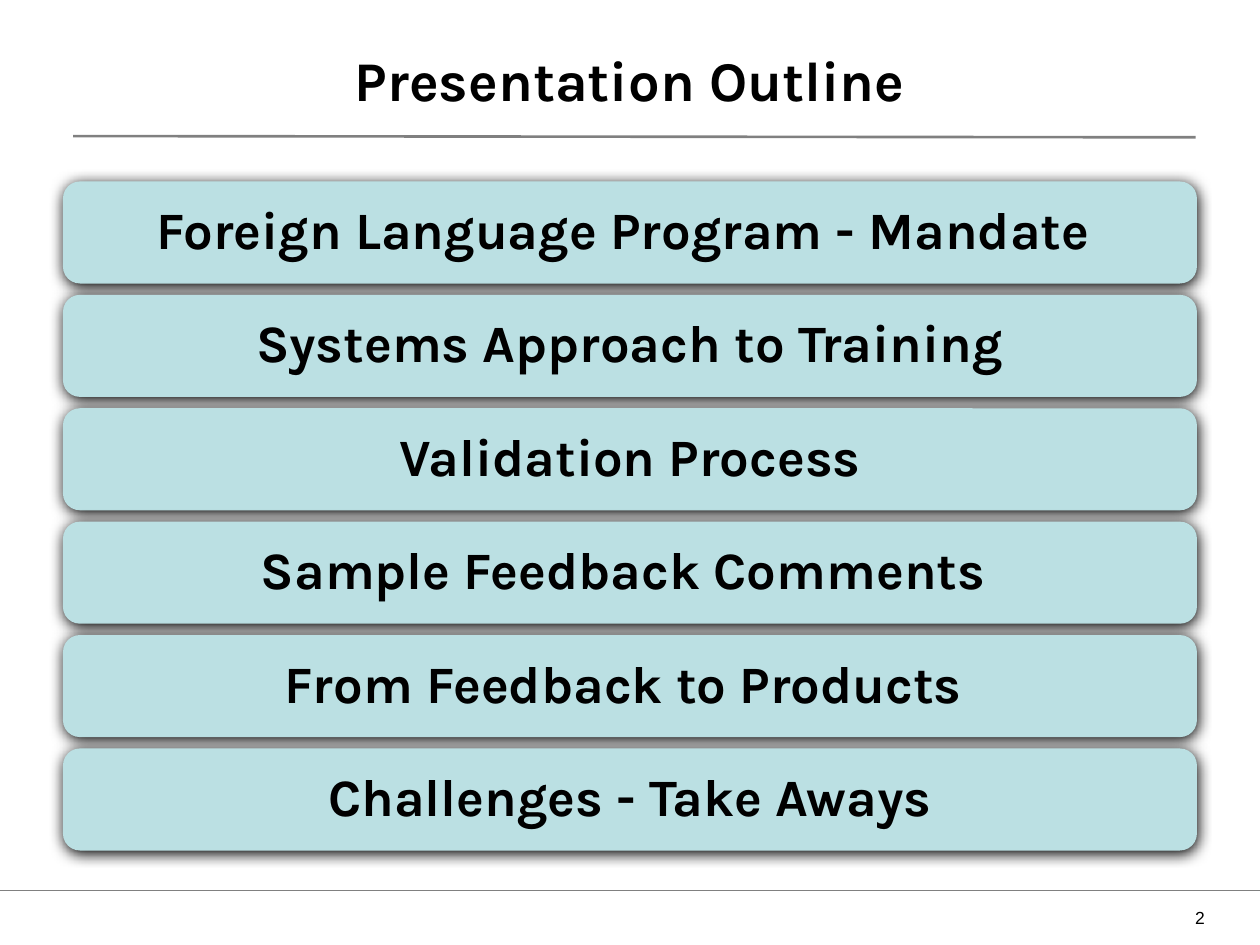
"""Build the presentation outline slide with six stacked topic bars."""
from lxml import etree
from pptx import Presentation
from pptx.dml.color import RGBColor
from pptx.enum.shapes import MSO_CONNECTOR, MSO_SHAPE
from pptx.enum.text import MSO_ANCHOR, MSO_AUTO_SIZE, PP_ALIGN
from pptx.oxml import parse_xml
from pptx.oxml.ns import nsdecls, qn
from pptx.util import Inches, Pt

STRAIGHT = MSO_CONNECTOR.STRAIGHT
ROUNDED = MSO_SHAPE.ROUNDED_RECTANGLE
MIDDLE, TOP = MSO_ANCHOR.MIDDLE, MSO_ANCHOR.TOP
CENTER, RIGHT = PP_ALIGN.CENTER, PP_ALIGN.RIGHT
NO_AUTOFIT = MSO_AUTO_SIZE.NONE

TITLE = "Presentation Outline"
TOPICS = [
    "Foreign Language Program - Mandate ",
    "Systems Approach to Training",
    "Validation Process",
    "Sample Feedback Comments ",
    "From Feedback to Products ",
    "Challenges - Take Aways",
]
PAGE_NUMBER = "2"
RULES = [
    ((0.58, 1.08), (9.49, 1.09), 1.5),
    ((0, 7.07), (10, 7.07), 0.75),
]
THEME = {
    "heading_font": "Karla",
    "number_font": "Arial",
    "title_size": 32,
    "topic_size": 30,
    "number_size": 10,
    "text": RGBColor(0, 0, 0),
    "bar": RGBColor(0xBB, 0xE0, 0xE3),
    "rule": RGBColor(0x80, 0x80, 0x80),
}
BAR_LEFT, BAR_TOP, BAR_WIDTH, BAR_HEIGHT = 0.5, 1.44, 9, 0.81
BAR_PITCH = 0.9
BAR_INSET = 0.16
SHADOW = (
    f'<a:effectLst {nsdecls("a")}>'
    f'<a:outerShdw blurRad="{Pt(8.5)}" dist="{Pt(1)}" dir="5400000" rotWithShape="0">'
    '<a:srgbClr val="000000"/></a:outerShdw></a:effectLst>'
)


def write(frame, text, font, size, align, anchor, bold=True):
    frame.word_wrap = True
    frame.auto_size = NO_AUTOFIT
    frame.vertical_anchor = anchor
    paragraph = frame.paragraphs[0]
    paragraph.alignment = align
    run = paragraph.add_run()
    run.text = text
    run.font.name = font
    run.font.size = Pt(size)
    run.font.bold = bold
    run.font.color.rgb = THEME["text"]
    return paragraph


def add_rule(slide, start, end, width):
    rule = slide.shapes.add_connector(STRAIGHT, *map(Inches, start + end))
    rule.line.color.rgb = THEME["rule"]
    rule.line.width = Pt(width)
    etree.SubElement(rule._element.spPr, qn("a:effectLst"))


def add_topic_bar(slide, index, topic):
    top = BAR_TOP + index * BAR_PITCH
    bar = slide.shapes.add_shape(
        ROUNDED, Inches(BAR_LEFT), Inches(top), Inches(BAR_WIDTH), Inches(BAR_HEIGHT)
    )
    bar.fill.solid()
    bar.fill.fore_color.rgb = THEME["bar"]
    bar.line.fill.background()
    bar._element.spPr.append(parse_xml(SHADOW))
    frame = bar.text_frame
    frame.margin_left = frame.margin_right = Inches(BAR_INSET)
    frame.margin_top = frame.margin_bottom = Inches(BAR_INSET)
    paragraph = write(
        frame, topic, THEME["heading_font"], THEME["topic_size"], CENTER, MIDDLE
    )
    paragraph.line_spacing = 0.9


def main():
    deck = Presentation()
    deck.slide_width, deck.slide_height = Inches(10), Inches(7.5)
    slide = deck.slides.add_slide(deck.slide_layouts[5])

    for start, end, width in RULES:
        add_rule(slide, start, end, width)

    title = slide.shapes.title
    title.left, title.top = Inches(0.5), Inches(0)
    title.width, title.height = Inches(9), Inches(1.25)
    write(
        title.text_frame, TITLE, THEME["heading_font"], THEME["title_size"], CENTER, MIDDLE
    )

    for index, topic in enumerate(TOPICS):
        add_topic_bar(slide, index, topic)

    number = slide.shapes.add_textbox(
        Inches(7.58), Inches(7.15), Inches(2.08), Inches(0.42)
    )
    write(
        number.text_frame, PAGE_NUMBER, THEME["number_font"], THEME["number_size"],
        RIGHT, TOP, bold=False,
    )
    deck.save("out.pptx")


if __name__ == "__main__":
    main()
